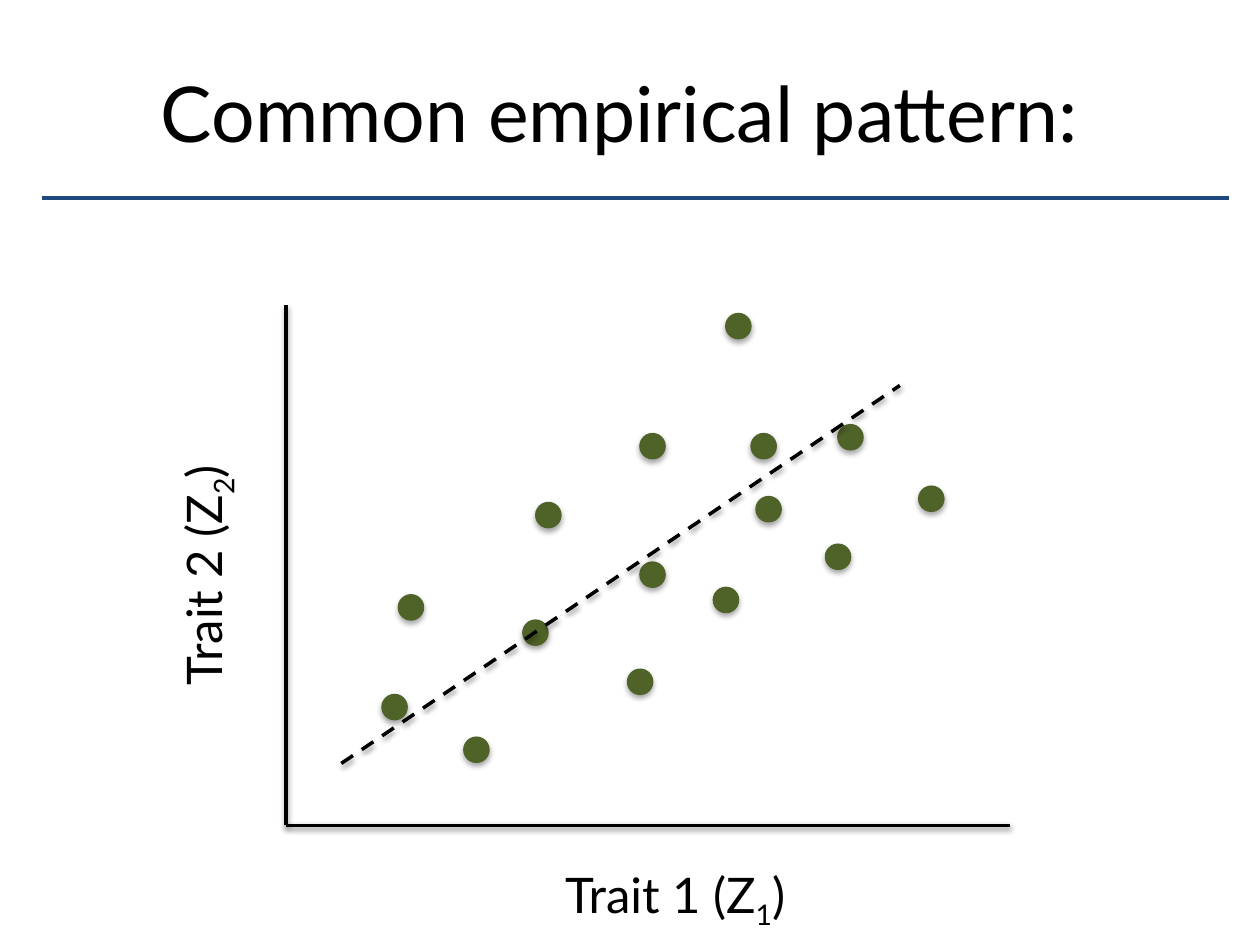
from lxml import etree
from pptx import Presentation
from pptx.dml.color import RGBColor
from pptx.enum.dml import MSO_LINE
from pptx.enum.shapes import MSO_CONNECTOR, MSO_SHAPE
from pptx.enum.text import MSO_ANCHOR, PP_ALIGN
from pptx.oxml.ns import qn
from pptx.util import Cm, Pt

STRAIGHT = MSO_CONNECTOR.STRAIGHT
OVAL = MSO_SHAPE.OVAL
DASH = MSO_LINE.DASH
TOP = MSO_ANCHOR.TOP
CENTER = PP_ALIGN.CENTER

COLORS = {"ink": "000000", "rule": "1F497D", "dot": "4F6228"}
FONT = "Lato"
DOT_SIZE = 0.51
AXIS_LEFT, AXIS_TOP, AXIS_RIGHT, AXIS_BOTTOM = 5.77, 6.15, 20.37, 16.64
LABEL_SIZE = (6.5, 1.45)
LINE_SHADOW = {"blurRad": 40000, "dist": 20000, "opacity": 38000}
DOT_SHADOW = {"blurRad": 40000, "dist": 23000, "opacity": 35000}
DOTS = [
    (15.14, 8.74), (15.24, 10.01), (14.63, 6.32), (16.89, 8.56), (16.64, 10.97),
    (18.52, 9.8), (9.35, 14.86), (14.38, 11.84), (10.8, 10.13), (10.54, 12.5),
    (7.7, 14), (8.03, 11.99), (12.9, 11.33), (12.9, 8.74), (12.65, 13.49),
]


def color(name):
    return RGBColor.from_string(COLORS[name])


def apply(target, values):
    for name, value in values.items():
        setattr(target, name, value)


class SlideBuilder:
    """Draws styled text, lines and data points on one slide."""

    def __init__(self, slide):
        self.slide = slide
        self.frame_format = {"word_wrap": True, "vertical_anchor": TOP}

    def text(self, position, size, pieces, points, rotation=0):
        shape = self.slide.shapes.add_textbox(*map(Cm, position + size))
        shape.rotation = rotation
        apply(shape.text_frame, self.frame_format)
        paragraph = shape.text_frame.paragraphs[0]
        paragraph.alignment = CENTER
        for content, baseline in pieces:
            run = paragraph.add_run()
            run.text = content
            apply(run.font, {"name": FONT, "size": Pt(points)})
            run.font.color.rgb = color("ink")
            if baseline:
                run.font._element.set("baseline", str(baseline))

    def axis_label(self, position, name, index, rotation=0):
        pieces = [(f"{name} (Z", 0), (index, -25000), (")", 0)]
        self.text(position, LABEL_SIZE, pieces, 28, rotation)

    def line(self, start, end, color_name="ink", shadow=None, dash=None, parent=None):
        shapes = (parent or self.slide).shapes
        connector = shapes.add_connector(STRAIGHT, *map(Cm, start + end))
        connector.line.color.rgb = color(color_name)
        apply(connector.line, {"width": Pt(2), "dash_style": dash})
        self.shadow(connector, shadow)

    def dot(self, position):
        shape = self.slide.shapes.add_shape(
            OVAL, *map(Cm, position + (DOT_SIZE, DOT_SIZE))
        )
        shape.fill.solid()
        shape.fill.fore_color.rgb = color("dot")
        shape.line.color.rgb = color("dot")
        shape.line.width = Pt(0.75)
        self.shadow(shape, DOT_SHADOW)

    def shadow(self, shape, values):
        effects = etree.SubElement(shape._element.spPr, qn("a:effectLst"))
        if values:
            outer = etree.SubElement(effects, qn("a:outerShdw"))
            for name in ("blurRad", "dist"):
                outer.set(name, str(values[name]))
            outer.set("dir", "5400000")
            outer.set("rotWithShape", "0")
            tint = etree.SubElement(outer, qn("a:srgbClr"), val=COLORS["ink"])
            etree.SubElement(tint, qn("a:alpha"), val=str(values["opacity"]))


def main():
    presentation = Presentation()
    apply(presentation, {"slide_width": Cm(25.4), "slide_height": Cm(19.05)})
    slide = presentation.slides.add_slide(presentation.slide_layouts[6])
    builder = SlideBuilder(slide)

    builder.text((-0.43, 1.19), (26.24, 4.65), [("Common empirical pattern: ", 0)], 44)
    builder.line((0.84, 3.99), (24.77, 3.99), "rule")

    axes = slide.shapes.add_group_shape()
    origin = (AXIS_LEFT, AXIS_BOTTOM)
    for start in ((AXIS_LEFT, AXIS_TOP), (AXIS_RIGHT, AXIS_BOTTOM)):
        builder.line(start, origin, shadow=LINE_SHADOW, parent=axes)
    builder.axis_label((10.36, 17.3), "Trait 1", "1")
    builder.axis_label((0.84, 10.87), "Trait 2", "2", 270)

    for position in DOTS:
        builder.dot(position)
    builder.line((6.88, 15.39), (18.14, 7.77), shadow=LINE_SHADOW, dash=DASH)
    presentation.save("out.pptx")


if __name__ == "__main__":
    main()
